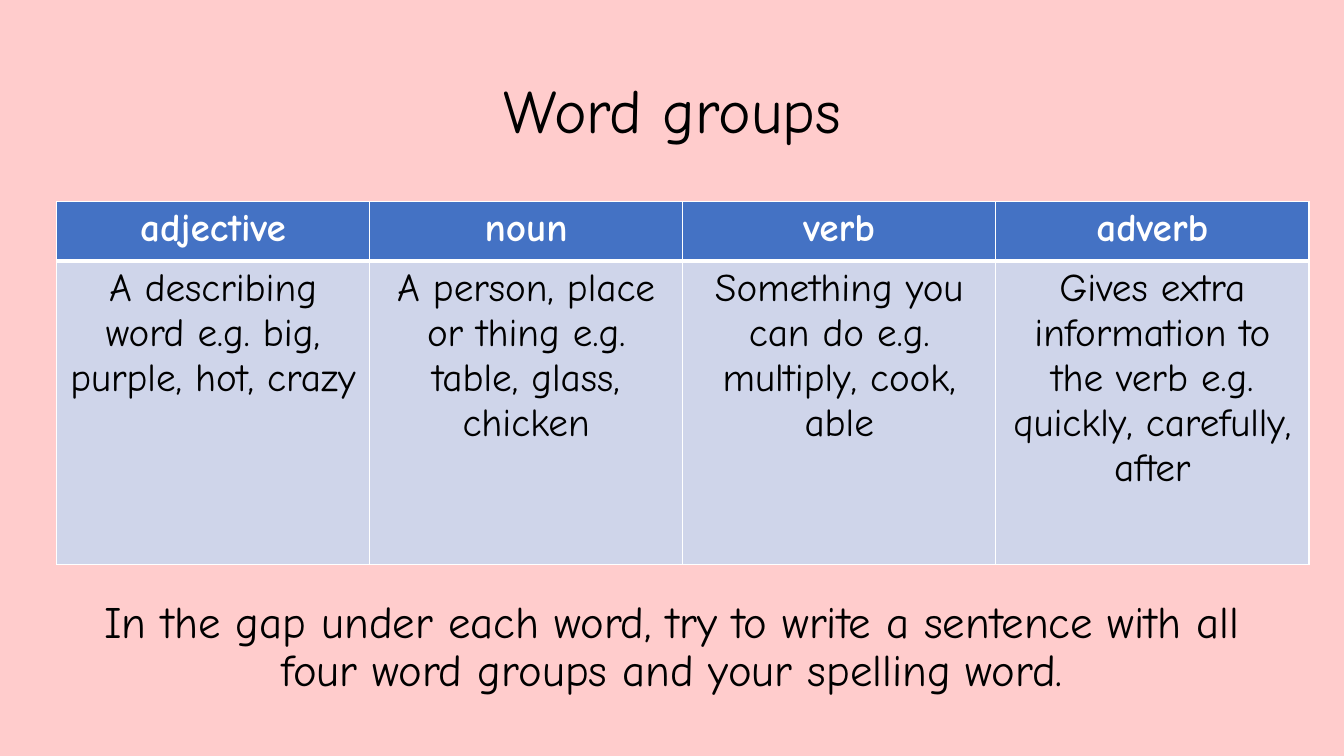
from dataclasses import dataclass

from lxml.etree import SubElement
from pptx import Presentation
from pptx.dml.color import RGBColor
from pptx.enum.text import MSO_ANCHOR, PP_ALIGN
from pptx.oxml.ns import qn
from pptx.util import Inches, Pt

SLIDE_W, SLIDE_H = Inches(13.33), Inches(7.5)
FONT = "Comic Neue"
BLACK, WHITE = "000000", "FFFFFF"
PINK, BLUE, PALE_BLUE = "FFCCCC", "4472C4", "CFD5EA"


@dataclass
class Box:
    """Left, top, width and height in percent of the slide."""
    left: float
    top: float
    width: float
    height: float

    def emu(self) -> tuple:
        return (across(self.left), down(self.top),
                across(self.width), down(self.height))


@dataclass
class WordGroup:
    name: str
    meaning: str


@dataclass
class RowStyle:
    height: float
    fill: str
    color: str
    bold: bool
    bottom_line: float


TITLE_BOX = Box(6.9, 5.33, 86.25, 19.33)
TABLE_BOX = Box(4.2, 26.67, 93.2, 48)
TASK_BOX = Box(6.9, 78.67, 86.25, 21.33)
HEADER = RowStyle(7.87, BLUE, WHITE, True, 3)
BODY = RowStyle(40.13, PALE_BLUE, BLACK, False, 1)

WORD_GROUPS = [
    WordGroup("adjective", "A describing word e.g. big, purple, hot, crazy"),
    WordGroup("noun", "A person, place or thing e.g. table, glass, chicken"),
    WordGroup("verb", "Something you can do e.g. multiply, cook, able"),
    WordGroup("adverb", "Gives extra information to the verb e.g. quickly, carefully, after"),
]
TASK = ("In the gap under each word, try to write a sentence with all "
        "four word groups and your spelling word.")


def across(percent: float) -> int:
    return round(SLIDE_W * percent / 100)


def down(percent: float) -> int:
    return round(SLIDE_H * percent / 100)


def rgb(value: str) -> RGBColor:
    return RGBColor.from_string(value)


def write(tf, text: str, *, size: float, color: str = BLACK, bold: bool = False,
          spacing: float = 1.0, before: float = 0) -> None:
    tf.word_wrap = True
    p = tf.paragraphs[0]
    p.alignment = PP_ALIGN.CENTER
    p.line_spacing = spacing
    p.space_before = Pt(before)
    r = p.add_run()
    r.text = text
    r.font.name, r.font.size, r.font.bold = FONT, Pt(size), bold
    r.font.color.rgb = rgb(color)


def add_borders(cell, bottom: float) -> None:
    tc_pr = cell._tc.get_or_add_tcPr()
    for tag, width in (("lnL", 1), ("lnR", 1), ("lnT", 1), ("lnB", bottom)):
        ln = SubElement(tc_pr, qn(f"a:{tag}"), w=str(Pt(width)))
        fill = SubElement(ln, qn("a:solidFill"))
        SubElement(fill, qn("a:srgbClr"), val=WHITE)


def fill_row(table, row: int, texts: list[str], style: RowStyle) -> None:
    table.rows[row].height = down(style.height)
    for cell, text in zip(table.rows[row].cells, texts):
        write(cell.text_frame, text, size=28, color=style.color, bold=style.bold)
        add_borders(cell, style.bottom_line)
        cell.fill.solid()
        cell.fill.fore_color.rgb = rgb(style.fill)


def main() -> None:
    prs = Presentation()
    prs.slide_width, prs.slide_height = SLIDE_W, SLIDE_H
    s = prs.slides.add_slide(prs.slide_layouts[5])
    s.background.fill.solid()
    s.background.fill.fore_color.rgb = rgb(PINK)

    # Title
    title = s.shapes.title
    title.left, title.top, title.width, title.height = TITLE_BOX.emu()
    title.text_frame.vertical_anchor = MSO_ANCHOR.MIDDLE
    write(title.text_frame, "Word groups", size=44, spacing=0.9)

    # Table of word groups
    table = s.shapes.add_table(2, len(WORD_GROUPS), *TABLE_BOX.emu()).table
    fill_row(table, 0, [g.name for g in WORD_GROUPS], HEADER)
    fill_row(table, 1, [g.meaning for g in WORD_GROUPS], BODY)

    # Task
    task = s.shapes.add_textbox(*TASK_BOX.emu())
    write(task.text_frame, TASK, size=32, spacing=0.9, before=10)

    prs.save("out.pptx")


if __name__ == "__main__":
    main()
